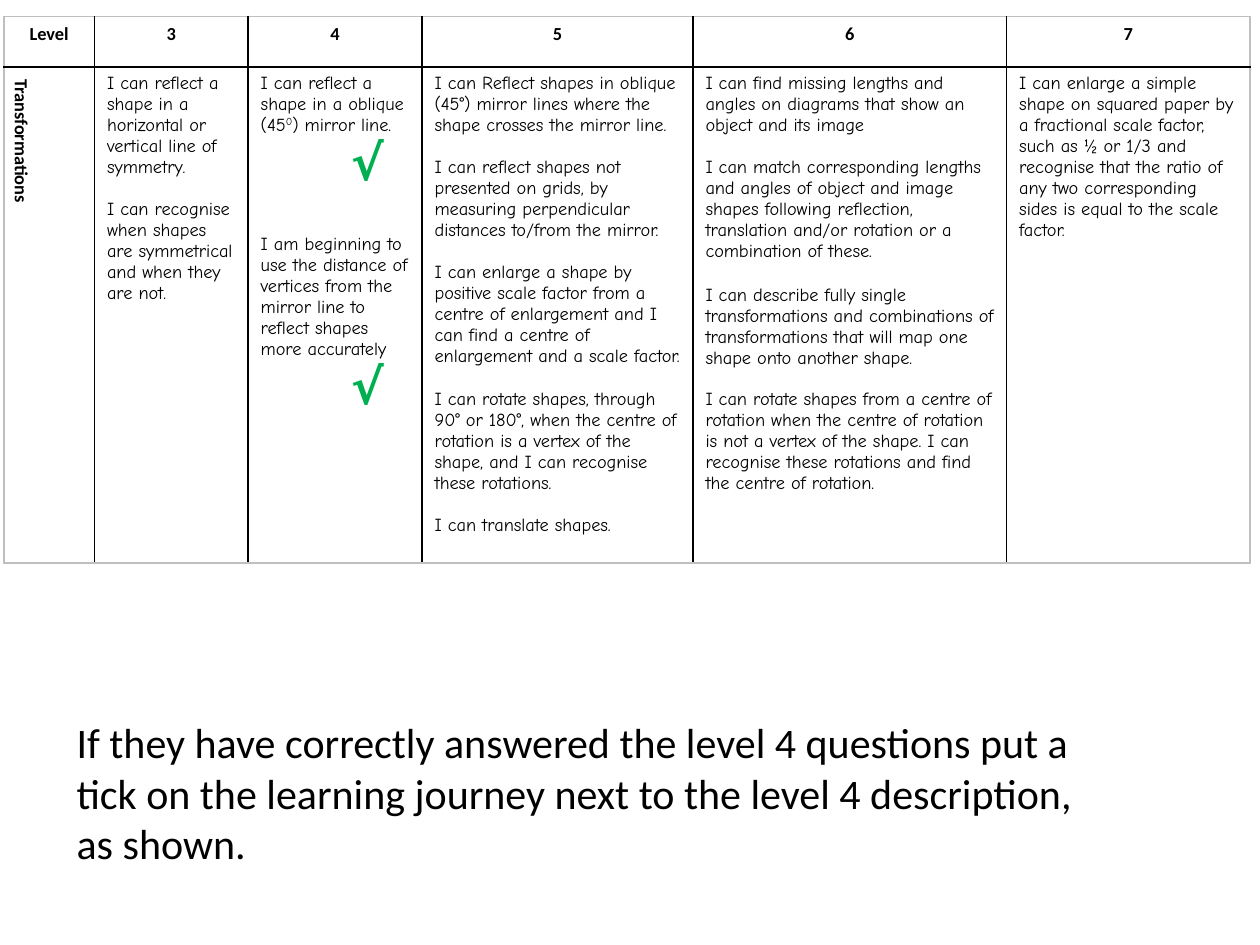
from lxml import etree
from pptx import Presentation
from pptx.dml.color import RGBColor as RGB
from pptx.enum.text import PP_ALIGN as ALIGN
from pptx.oxml.ns import qn
from pptx.util import Inches, Pt

COLORS = {"text": "000000", "tick": "00B050", "cell": "FFFFFF",
          "grid": "000000", "frame": "BFBFBF"}
COL_WIDTHS = [0.72, 1.22, 1.38, 2.15, 2.49, 1.93]
ROW_HEIGHTS = [0.4, 3.94]
HEADINGS = ["Level", "3", "4", "5", "6", "7"]
TOPIC = "Transformations"
TICK = "√"
GAP, WIDE_GAP, TICK_GAP = 12, 13, 24  # points before a statement

# One list per level; each statement is (points before, text)
STATEMENTS = [
    [(0, "I can reflect a shape in a horizontal or vertical line of symmetry."),
     (GAP, "I can recognise when shapes are symmetrical and when they are not.")],
    [(0, "I can reflect a shape in a oblique (45^0^) mirror line."),
     (0, TICK),
     (TICK_GAP, "I am beginning to use the distance of vertices from the mirror "
                "line to reflect shapes more accurately"),
     (0, TICK)],
    [(0, "I can Reflect shapes in oblique (45°) mirror lines where the shape "
         "crosses the mirror line."),
     (GAP, "I can reflect shapes not presented on grids, by measuring "
           "perpendicular distances to/from the mirror."),
     (GAP, "I can enlarge a shape by positive scale factor from a centre of "
           "enlargement and I can find a centre of enlargement and a scale factor."),
     (WIDE_GAP, "I can rotate shapes, through 90° or 180°, when the centre of "
                "rotation is a vertex of the shape, and I can recognise these "
                "rotations."),
     (GAP, "I can translate shapes.")],
    [(0, "I can find missing lengths and angles on diagrams that show an object "
         "and its image"),
     (GAP, "I can match corresponding lengths and angles of object and image "
           "shapes following reflection, translation and/or rotation or a "
           "combination of these."),
     (WIDE_GAP, "I can describe fully single transformations and combinations of "
                "transformations that will map one shape onto another shape."),
     (GAP, "I can rotate shapes from a centre of rotation when the centre of "
           "rotation is not a vertex of the shape. I can recognise these "
           "rotations and find the centre of rotation.")],
    [(0, "I can enlarge a simple shape on squared paper by a fractional scale "
         "factor, such as ½ or 1/3 and recognise that the ratio of any two "
         "corresponding sides is equal to the scale factor.")],
]


def add_run(p, text, size=10.5, font="Comic Neue", color="text", bold=False):
    r = p.add_run()
    r.text = text
    r.font.size, r.font.name, r.font.bold = Pt(size), font, bold
    r.font.color.rgb = RGB.from_string(COLORS[color])
    return r


def set_borders(cell, sides):
    """Draw 1 pt lines; sides maps each of L, R, T, B to a colour name."""
    tc_pr = cell._tc.get_or_add_tcPr()
    for side in "LRTB":
        ln = etree.SubElement(tc_pr, qn(f"a:ln{side}"), w=str(Pt(1)))
        fill = etree.SubElement(ln, qn("a:solidFill"))
        etree.SubElement(fill, qn("a:srgbClr"), val=COLORS[sides[side]])


def write_statements(cell, statements):
    """Fill a level's cell; text between carets is superscript."""
    tf = cell.text_frame
    for i, (before, text) in enumerate(statements):
        p = tf.paragraphs[0] if i == 0 else tf.add_paragraph()
        p.space_before = Pt(before)
        if text == TICK:
            p._p.get_or_add_pPr().set("marL", str(Inches(0.72)))
            add_run(p, text, size=28, color="tick", bold=True)
            continue
        for j, part in enumerate(text.split("^")):
            r = add_run(p, part)
            if j % 2:
                r.font._element.set("baseline", "30000")


def add_levels_table(s, left, top, width, height):
    rows, cols = len(ROW_HEIGHTS), len(COL_WIDTHS)
    table = s.shapes.add_table(rows, cols, left, top, width, height).table
    table.first_row = table.horz_banding = False
    for col, w in zip(table.columns, COL_WIDTHS):
        col.width = Inches(w)
    for row, h in zip(table.rows, ROW_HEIGHTS):
        row.height = Inches(h)

    for i in range(rows):
        for j in range(cols):
            cell = table.cell(i, j)
            edges = {"L": j == 0, "R": j == cols - 1, "T": i == 0, "B": i == rows - 1}
            set_borders(cell, {k: "frame" if e else "grid" for k, e in edges.items()})
            cell.fill.solid()
            cell.fill.fore_color.rgb = RGB.from_string(COLORS["cell"])

    for j, heading in enumerate(HEADINGS):
        p = table.cell(0, j).text_frame.paragraphs[0]
        p.alignment = ALIGN.CENTER
        add_run(p, heading, font="Calibri", bold=True)

    topic = table.cell(1, 0)
    topic._tc.get_or_add_tcPr().set("vert", "vert")
    add_run(topic.text_frame.paragraphs[0], TOPIC, font="Calibri", bold=True)
    for j, statements in enumerate(STATEMENTS, start=1):
        write_statements(table.cell(1, j), statements)


def add_instruction(s, left, top, width, height):
    tf = s.shapes.add_textbox(left, top, width, height).text_frame
    tf.word_wrap = True
    add_run(tf.paragraphs[0],
            "If they have correctly answered the level 4 questions put a tick on the "
            "learning journey next to the level 4 description, as shown.",
            size=24, font="Calibri")


def main():
    prs = Presentation()
    prs.slide_width, prs.slide_height = Inches(10), Inches(7.5)
    s = prs.slides.add_slide(prs.slide_layouts[6])
    add_levels_table(s, Inches(0.03), Inches(0.13),
                     Inches(sum(COL_WIDTHS)), Inches(sum(ROW_HEIGHTS)))
    add_instruction(s, Inches(0.51), Inches(5.64), Inches(8.43), Inches(1.31))
    prs.save("out.pptx")


if __name__ == "__main__":
    main()
